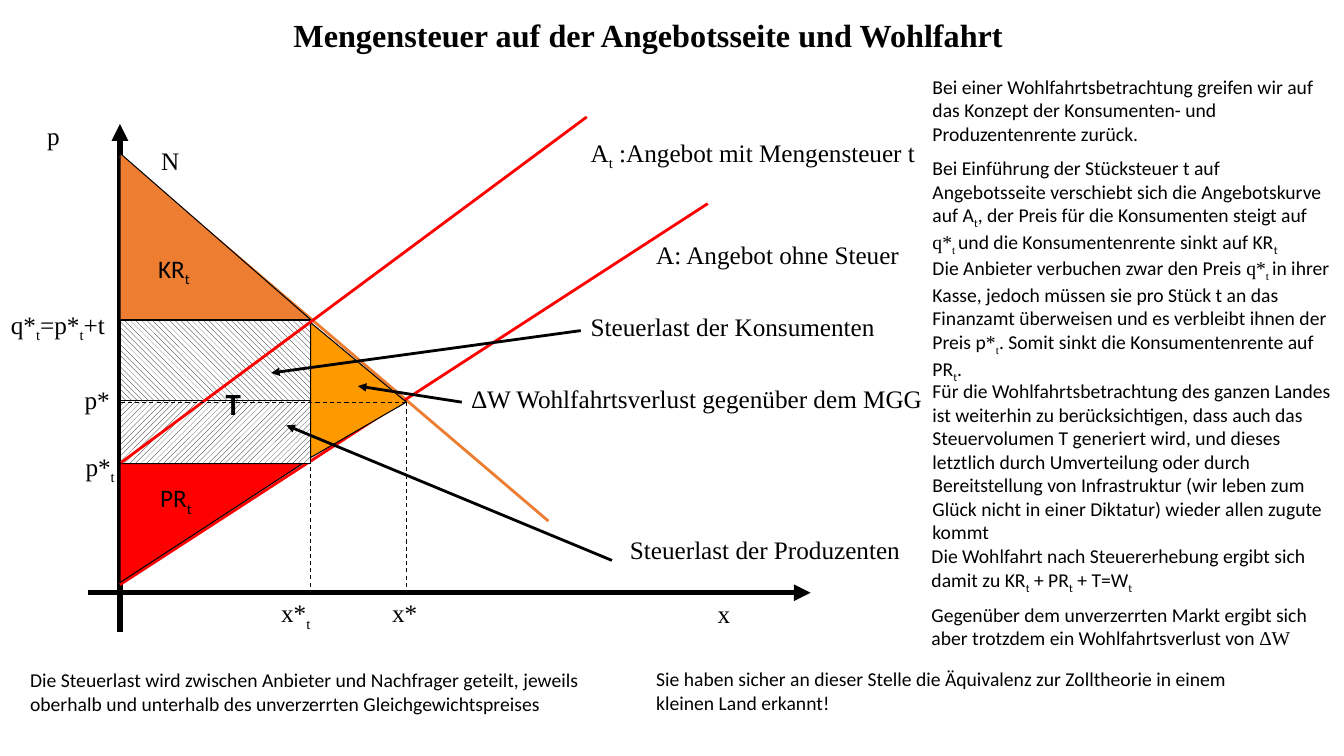
from typing import NamedTuple

from lxml import etree
from pptx import Presentation
from pptx.dml.color import RGBColor
from pptx.enum.dml import MSO_LINE_DASH_STYLE, MSO_PATTERN_TYPE
from pptx.enum.shapes import MSO_CONNECTOR_TYPE
from pptx.enum.text import MSO_ANCHOR, MSO_AUTO_SIZE, PP_ALIGN
from pptx.oxml.ns import qn
from pptx.util import Inches, Pt

STRAIGHT = MSO_CONNECTOR_TYPE.STRAIGHT
DASH = MSO_LINE_DASH_STYLE.DASH
HATCH_UP = MSO_PATTERN_TYPE.WIDE_UPWARD_DIAGONAL
HATCH_DOWN = MSO_PATTERN_TYPE.WIDE_DOWNWARD_DIAGONAL
FIT_SHAPE = MSO_AUTO_SIZE.SHAPE_TO_FIT_TEXT
MIDDLE = MSO_ANCHOR.MIDDLE
LEFT = PP_ALIGN.LEFT

SERIF, SANS = "Times New Roman", "Calibri"
COLORS = {
    "black": "000000",
    "white": "FFFFFF",
    "demand": "ED7D31",
    "supply": "FF0000",
    "loss": "FF9900",
}

# Key positions in the diagram
AXIS_X, AXIS_Y = 1.19, 5.88
TAX_X, MARKET_X = 3.08, 4.03
CONSUMER_P, MARKET_P, PRODUCER_P = 3.18, 3.97, 4.6
MARKET_POINT = (MARKET_X, 3.99)

Point = tuple[float, float]


class Line(NamedTuple):
    start: Point
    end: Point
    color: str = "black"
    width: float = 2
    arrow: bool = False
    dashed: bool = False


class Area(NamedTuple):
    corners: list[Point]
    color: str = "black"
    pattern: MSO_PATTERN_TYPE | None = None


class Label(NamedTuple):
    """In text, ~ encloses subscripts and | encloses serif passages."""
    left: float
    top: float
    width: float
    text: str
    height: float = 0.4
    font: str = SERIF
    size: float = 18
    bold: bool = False
    wrap: bool = False


def note(left: float, top: float, width: float, height: float, text: str) -> Label:
    return Label(left, top, width, text, height, SANS, 14, wrap=True)


def guide(start: Point, end: Point) -> Line:
    return Line(start, end, width=0.75, dashed=True)


def rectangle(top: float, bottom: float) -> list[Point]:
    return [(AXIS_X, top), (TAX_X, top), (TAX_X, bottom), (AXIS_X, bottom)]


BACK_LINES = [
    Line((AXIS_X, 6.27), (AXIS_X, 1.23), width=4, arrow=True),
    Line((0.87, AXIS_Y), (8.04, AXIS_Y), width=4, arrow=True),
    Line((AXIS_X, 1.55), (5.44, 5.17), "demand"),
    Line((AXIS_X, 5.8), (7.02, 2.02), "supply"),
    guide((MARKET_X, MARKET_P), (AXIS_X, MARKET_P)),
    guide(MARKET_POINT, (MARKET_X, AXIS_Y)),
    guide((TAX_X, 3.2), (TAX_X, AXIS_Y)),
]

AREAS = [
    Area(rectangle(MARKET_P, PRODUCER_P), pattern=HATCH_UP),
    Area(rectangle(CONSUMER_P, MARKET_P), pattern=HATCH_DOWN),
    Area([(AXIS_X, 3.17), (TAX_X, 3.17), (AXIS_X, 1.52)], "demand"),
    Area([(AXIS_X, 5.78), (3, PRODUCER_P), (AXIS_X, PRODUCER_P)], "supply"),
    Area([(TAX_X, 4.54), MARKET_POINT, (TAX_X, 3.2)], "loss"),
]

FRONT_LINES = [
    Line((6.07, 5.56), (2.84, 4.22), arrow=True),
    Line((5.76, 3.28), (2.69, 3.7), arrow=True),
    Line((4.58, 3.99), (3.55, 3.83), arrow=True),
    Line((1.2, 4.59), (5.82, 1.16), "supply"),
    guide(MARKET_POINT, (AXIS_X, 3.99)),
]

LABELS = [
    # Axes and curves
    Label(0.37, 1.14, 0.33, "p"),
    Label(7.02, 5.89, 0.33, "x"),
    Label(1.5, 1.39, 0.38, "N"),
    Label(6.41, 2.33, 2.62, "A: Angebot ohne Steuer"),
    Label(5.76, 1.31, 3.46, "A~t~ :Angebot mit Mengensteuer t"),
    # Prices and quantities
    Label(0.74, 3.76, 0.45, "p*"),
    Label(0.75, 4.43, 0.5, "p*~t~"),
    Label(0.01, 3.02, 1.18, "q*~t~=p*~t~+t", wrap=True),
    Label(3.79, 5.88, 0.45, "x*"),
    Label(2.69, 5.88, 0.5, "x*~t~", 0.61),
    # Areas
    Label(6.15, 5.25, 3, "Steuerlast der Produzenten"),
    Label(5.76, 3.04, 3.12, "Steuerlast der Konsumenten"),
    Label(4.58, 3.75, 4.72, "∆W Wohlfahrtsverlust gegenüber dem MGG"),
    Label(1.47, 2.46, 0.53, "KR~t~", font=SANS),
    Label(1.49, 4.74, 0.52, "PR~t~", font=SANS),
    Label(2.14, 3.77, 0.35, "T", 0.47, SANS, 22, bold=True),
    # Explanations
    note(9.15, 0.69, 4.18, 0.81,
         "Bei einer Wohlfahrtsbetrachtung greifen wir auf das Konzept der "
         "Konsumenten- und Produzentenrente zurück."),
    note(9.15, 1.5, 4.18, 1.04,
         "Bei Einführung der Stücksteuer t auf Angebotsseite verschiebt sich die "
         "Angebotskurve auf A~t~, der Preis für die Konsumenten steigt auf "
         "|q*~t ~|und die Konsumentenrente sinkt auf KR~t~"),
    note(9.15, 2.49, 4.18, 1.28,
         "Die Anbieter verbuchen zwar den Preis |q*~t ~|in ihrer Kasse, jedoch "
         "müssen sie pro Stück t an das Finanzamt überweisen und es verbleibt ihnen "
         "der Preis p|*~t~|. Somit sinkt die Konsumentenrente auf PR~t~."),
    note(9.15, 3.71, 4.18, 1.75,
         "Für die Wohlfahrtsbetrachtung des ganzen Landes ist weiterhin zu "
         "berücksichtigen, dass auch das Steuervolumen T generiert wird, und dieses "
         "letztlich durch Umverteilung oder durch Bereitstellung von Infrastruktur "
         "(wir leben zum Glück nicht in einer Diktatur) wieder allen zugute kommt"),
    note(9.14, 5.35, 4.18, 0.57,
         "Die Wohlfahrt nach Steuererhebung ergibt sich damit zu "
         "KR~t~ + PR~t~ + T=W~t~"),
    note(9.14, 5.93, 4.18, 0.57,
         "Gegenüber dem unverzerrten Markt ergibt sich aber trotzdem ein "
         "Wohlfahrtsverlust von |∆W|"),
    note(0.2, 6.58, 6.21, 0.57,
         "Die Steuerlast wird zwischen Anbieter und Nachfrager geteilt, jeweils "
         "oberhalb und unterhalb des unverzerrten Gleichgewichtspreises"),
    note(6.41, 6.57, 6.21, 0.57,
         "Sie haben sicher an dieser Stelle die Äquivalenz zur Zolltheorie in einem "
         "kleinen Land erkannt!"),
]


def rgb(name: str) -> RGBColor:
    return RGBColor.from_string(COLORS[name])


def draw_line(page, line: Line) -> None:
    ends = [Inches(value) for value in (*line.start, *line.end)]
    connector = page.shapes.add_connector(STRAIGHT, *ends)
    connector.line.color.rgb = rgb(line.color)
    connector.line.width = Pt(line.width)
    if line.dashed:
        connector.line.dash_style = DASH
    if line.arrow:
        stroke = connector.line._get_or_add_ln()
        etree.SubElement(stroke, qn("a:tailEnd"), type="triangle")
    etree.SubElement(connector._element.spPr, qn("a:effectLst"))


def draw_area(page, area: Area) -> None:
    first, *others = [(Inches(x), Inches(y)) for x, y in area.corners]
    builder = page.shapes.build_freeform(*first)
    builder.add_line_segments(others, close=True)
    shape = builder.convert_to_shape()
    shape.shadow.inherit = False
    if area.pattern is None:
        shape.fill.solid()
    else:
        shape.fill.patterned()
        shape.fill.pattern = area.pattern
        shape.fill.back_color.rgb = rgb("white")
    shape.fill.fore_color.rgb = rgb(area.color)
    shape.line.color.rgb = rgb("black")
    shape.line.width = Pt(0.75)


def write_text(box, label: Label) -> None:
    box.left, box.top = Inches(label.left), Inches(label.top)
    box.width, box.height = Inches(label.width), Inches(label.height)
    frame = box.text_frame
    frame.word_wrap = label.wrap
    frame.auto_size = FIT_SHAPE
    para = frame.paragraphs[0]
    para.alignment = LEFT
    para.font.name, para.font.size = label.font, Pt(label.size)
    para.font.bold = label.bold
    para.font.color.rgb = rgb("black")
    for passage_index, passage in enumerate(label.text.split("|")):
        for piece_index, piece in enumerate(passage.split("~")):
            if not piece:
                continue
            span = para.add_run()
            span.text = piece
            if passage_index % 2:
                span.font.name = SERIF
            if piece_index % 2:
                span.font._element.set("baseline", "-25000")


def main() -> None:
    deck = Presentation()
    deck.slide_width, deck.slide_height = Inches(13.33), Inches(7.5)
    page = deck.slides.add_slide(deck.slide_layouts.get_by_name("Title Only"))

    # Title
    write_text(page.shapes.title, Label(
        2.81, 0.1, 8.18, "Mengensteuer auf der Angebotsseite und Wohlfahrt",
        0.49, size=23, bold=True, wrap=True))
    page.shapes.title.text_frame.vertical_anchor = MIDDLE

    # Diagram
    for line in BACK_LINES:
        draw_line(page, line)
    for area in AREAS:
        draw_area(page, area)
    for line in FRONT_LINES:
        draw_line(page, line)

    # Labels and explanations
    for label in LABELS:
        write_text(page.shapes.add_textbox(0, 0, 0, 0), label)

    deck.save("out.pptx")


if __name__ == "__main__":
    main()
